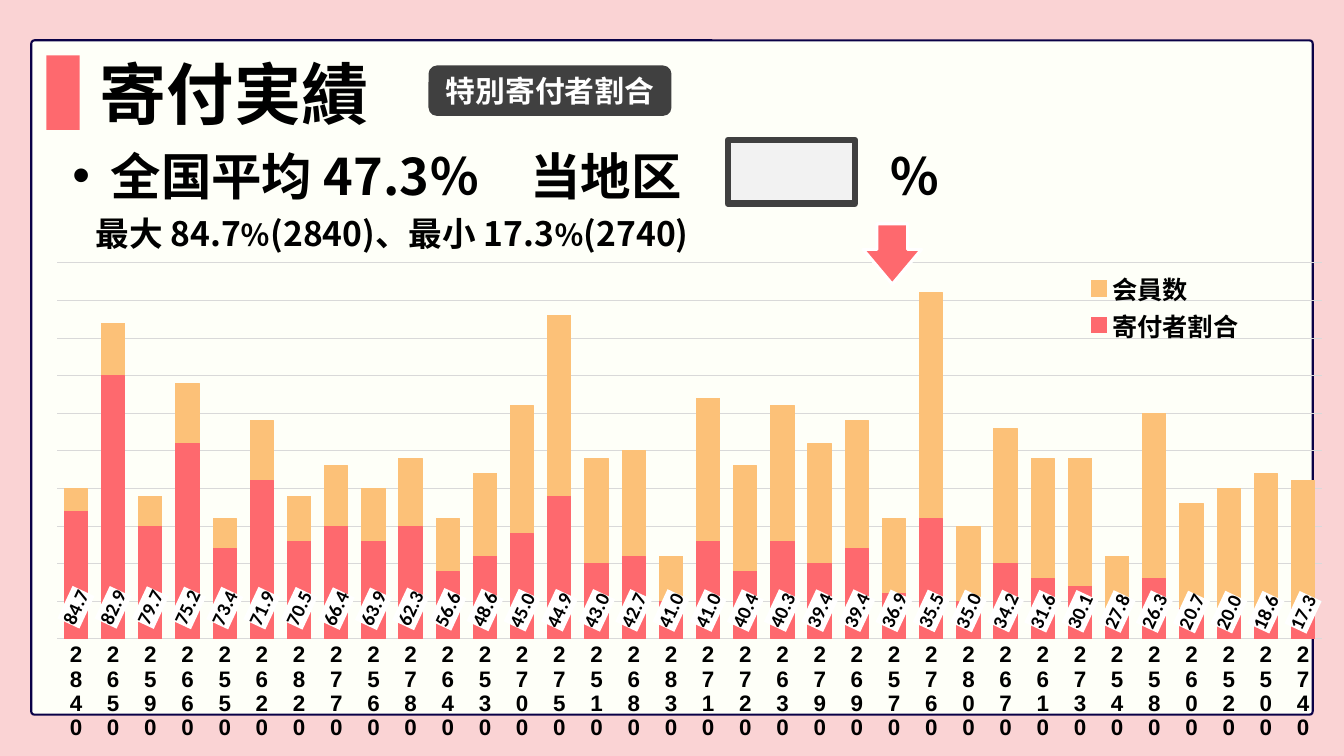
import pptx
import pptx.chart.data
import pptx.dml.color
import pptx.enum.chart
import pptx.enum.shapes
import pptx.enum.text
import pptx.oxml
import pptx.oxml.ns
import pptx.util
from pptx.util import Inches

CJK = "Noto Sans CJK JP"
BLACK, WHITE, DARK = "000000", "FFFFFF", "404040"
PINK, ORANGE, GRID = "FE696E", "FCC178", "D9D9D9"
SHAPES = pptx.enum.shapes.MSO_SHAPE

DISTRICTS = """2840 2650 2590 2660 2550 2620 2820 2770 2560 2780 2640 2530
2700 2750 2510 2680 2830 2710 2720 2630 2790 2690 2570 2760 2800 2670 2610
2730 2540 2580 2600 2520 2500 2740""".split()
RATES = [84.7, 82.9, 79.7, 75.2, 73.4, 71.9, 70.5, 66.4, 63.9, 62.3, 56.6, 48.6,
         45, 44.9, 43, 42.7, 41, 41, 40.4, 40.3, 39.4, 39.4, 36.9, 35.5, 35, 34.2,
         31.6, 30.1, 27.8, 26.3, 20.7, 20, 18.6, 17.3]
MEMBERS = [2000, 4200, 1900, 3400, 1600, 2900, 1900, 2300, 2000, 2400, 1600, 2200,
           3100, 4300, 2400, 2500, 1100, 3200, 2300, 3100, 2600, 2900, 1600, 4600,
           1500, 2800, 2400, 2400, 1100, 3000, 1800, 2000, 2200, 2100]
DONORS = [1700, 3500, 1500, 2600, 1200, 2100, 1300, 1500, 1300, 1500, 900, 1100,
          1400, 1900, 1000, 1100, 500, 1300, 900, 1300, 1000, 1200, 600, 1600,
          500, 1000, 800, 700, 300, 800, 400, 400, 400, 400]


def color(value):
    return pptx.dml.color.RGBColor.from_string(value)


def xml(tag, content="", **attributes):
    """Build one a: or c: element, with optional inner XML."""
    listed = "".join(f' {name}="{value}"' for name, value in attributes.items())
    spaces = pptx.oxml.ns.nsdecls("a", "c")
    return pptx.oxml.parse_xml(f"<{tag} {spaces}{listed}>{content}</{tag}>")


def style_font(font, size, face=CJK, value=BLACK):
    font.size, font.bold, font.name = pptx.util.Pt(size), True, face
    font.color.rgb = color(value)


def style_run(run, size, value=BLACK):
    style_font(run.font, size, value=value)
    properties = run.font._element
    properties.find(pptx.oxml.ns.qn("a:latin")).addnext(xml("a:ea", typeface=CJK))


def paint(item, fill, line=None, width=0.75):
    item.fill.solid()
    item.fill.fore_color.rgb = color(fill)
    if line:
        item.line.color.rgb = color(line)
        item.line.width = pptx.util.Pt(width)
    else:
        item.line.fill.background()


def add_block(slide, kind, box, fill, line=None, width=0.75, adjustments=()):
    shape = slide.shapes.add_shape(kind, *map(Inches, box))
    shape.shadow.inherit = False
    paint(shape, fill, line, width)
    for index, value in enumerate(adjustments):
        shape.adjustments[index] = value
    return shape


def add_text_box(slide, box):
    text_frame = slide.shapes.add_textbox(*map(Inches, box)).text_frame
    text_frame.word_wrap = True
    return text_frame


def add_panel(slide, left, top, width, height):
    add_block(slide, SHAPES.ROUNDED_RECTANGLE, (left, top, width, height),
              "FEFFF8", "0A0147", 1.5, [0.005])
    add_block(slide, SHAPES.RECTANGLE, (left + 0.15, top + 0.15, 0.33, 0.74), PINK)


def add_header(slide, left, top, width, height):
    # Title
    text_frame = add_text_box(slide, (left, top + 0.03, width, height))
    text_frame.vertical_anchor = pptx.enum.text.MSO_ANCHOR.MIDDLE
    text_frame.text = "寄付実績"
    style_run(text_frame.paragraphs[0].runs[0], 48)
    # Topic tag
    tag = add_block(slide, SHAPES.ROUNDED_RECTANGLE,
                    (left + 3.36, top + 0.18, 2.41, 0.5), DARK)
    tag.text_frame.text = "特別寄付者割合"
    tag.text_frame.vertical_anchor = pptx.enum.text.MSO_ANCHOR.MIDDLE
    paragraph = tag.text_frame.paragraphs[0]
    paragraph.alignment = pptx.enum.text.PP_ALIGN.CENTER
    style_run(paragraph.runs[0], 21.3, WHITE)


def add_summary(slide, left, top, width, height):
    text_frame = add_text_box(slide, (left, top, width, height))
    # National average, with a tab across the answer box
    average = text_frame.paragraphs[0]
    average.text = "全国平均 47.3％　当地区\t％"
    properties = average._p.get_or_add_pPr()
    properties.set("marL", str(Inches(0.38)))
    properties.set("indent", str(-Inches(0.38)))
    properties.append(xml("a:buFont", typeface="Arial"))
    properties.append(xml("a:buChar", char="•"))
    stop = f'<a:tab pos="{Inches(8.1)}" algn="l"/>'
    properties.append(xml("a:tabLst", stop))
    for run in average.runs:
        style_run(run, 36)
    # Highest and lowest districts
    extremes = text_frame.add_paragraph()
    extremes._p.get_or_add_pPr().set("marL", str(Inches(0.23)))
    extremes.space_before = pptx.util.Pt(5)
    for text in ("最大 84.7", "％", "(2840)、最小 17.3", "％", "(2740)"):
        run = extremes.add_run()
        run.text = text
        style_run(run, 21.3 if text == "％" else 24)
    # Empty answer box
    add_block(slide, SHAPES.RECTANGLE, (left + 6.6, top, 1.26, 0.63),
              "F2F2F2", DARK, 4.75)


def manual_layout(x, y, width, height, inner=False):
    target = '<c:layoutTarget val="inner"/>' if inner else ""
    sides = (("xMode", "edge"), ("yMode", "edge"), ("x", x), ("y", y),
             ("w", width), ("h", height))
    content = "".join(f'<c:{name} val="{value}"/>' for name, value in sides)
    return xml("c:layout", f"<c:manualLayout>{target}{content}</c:manualLayout>")


def add_district_chart(slide, left, top, width, height):
    data = pptx.chart.data.CategoryChartData()
    data.categories = DISTRICTS
    data.add_series("Series 1", RATES)
    data.add_series("会員数", MEMBERS)
    data.add_series("寄付者割合", DONORS)
    chart = slide.shapes.add_chart(
        pptx.enum.chart.XL_CHART_TYPE.COLUMN_CLUSTERED,
        *map(Inches, (left, top, width, height)), data).chart
    chart.has_title = False
    chart.font.size, chart.font.name = pptx.util.Pt(10), "Calibri"
    chart.font.color.rgb = color(BLACK)
    plot = chart.plots[0]
    plot.gap_width, plot.overlap, plot.vary_by_categories = 60, 100, False
    rates, members, donors = plot.series
    paint(rates.format, "9BBB59")
    paint(members.format, ORANGE, ORANGE)
    paint(donors.format, PINK, PINK)

    # Slanted rate labels on white
    labels = rates.data_labels
    labels.show_value = True
    labels.number_format, labels.number_format_is_linked = "0.0", False
    labels.position = pptx.enum.chart.XL_LABEL_POSITION.OUTSIDE_END
    style_font(labels.font, 14, "Calibri")
    label_text = labels._element.find(pptx.oxml.ns.qn("c:txPr"))
    label_text.bodyPr.set("rot", "-3900000")
    label_text.addprevious(xml(
        "c:spPr", f'<a:solidFill><a:srgbClr val="{WHITE}"/></a:solidFill>'))

    # Axes
    value_axis, category_axis = chart.value_axis, chart.category_axis
    value_axis.minimum_scale, value_axis.maximum_scale = 0, 5000
    value_axis.major_unit = 500
    value_axis.visible = False
    category_axis.major_tick_mark = pptx.enum.chart.XL_TICK_MARK.NONE
    for lines in (value_axis.major_gridlines, category_axis):
        lines.format.line.color.rgb = color(GRID)
        lines.format.line.width = pptx.util.Pt(0.75)
    style_font(category_axis.tick_labels.font, 16, "Arial")
    tick_body = category_axis._element.find(pptx.oxml.ns.qn("c:txPr")).bodyPr
    tick_body.set("rot", "0")
    tick_body.set("vert", "wordArtVert")

    # Legend without the rate series, and fixed plot area
    chart.has_legend = True
    legend = chart.legend
    legend.position = pptx.enum.chart.XL_LEGEND_POSITION.BOTTOM
    legend.include_in_layout = False
    style_font(legend.font, 18)
    for old in legend._element.findall(pptx.oxml.ns.qn("c:layout")):
        legend._element.remove(old)
    position = legend._element.find(pptx.oxml.ns.qn("c:legendPos"))
    position.addnext(manual_layout(0.77, 0.03, 0.14, 0.15))
    position.addnext(xml("c:legendEntry", '<c:idx val="0"/><c:delete val="1"/>'))
    plot_area = chart._chartSpace.chart.plotArea
    for old in plot_area.findall(pptx.oxml.ns.qn("c:layout")):
        plot_area.remove(old)
    plot_area.insert(0, manual_layout(0.012, 0.016, 0.945, 0.76, inner=True))


def main():
    presentation = pptx.Presentation()
    presentation.slide_width = Inches(13.33)
    presentation.slide_height = Inches(7.5)
    slide = presentation.slides.add_slide(presentation.slide_layouts[6])
    slide.background.fill.solid()
    slide.background.fill.fore_color.rgb = color("FAD3D4")
    add_panel(slide, 0.31, 0.4, 12.71, 6.69)
    add_header(slide, 0.89, 0.47, 8.24, 0.83)
    add_summary(slide, 0.62, 1.39, 12.29, 0.83)
    add_district_chart(slide, 0.41, 2.53, 13.27, 4.91)
    # Marker for the home district
    add_block(slide, SHAPES.DOWN_ARROW, (8.56, 2.22, 0.58, 0.6),
              PINK, WHITE, 2.25, [0.525, 0.595])
    presentation.save("out.pptx")


if __name__ == "__main__":
    main()
